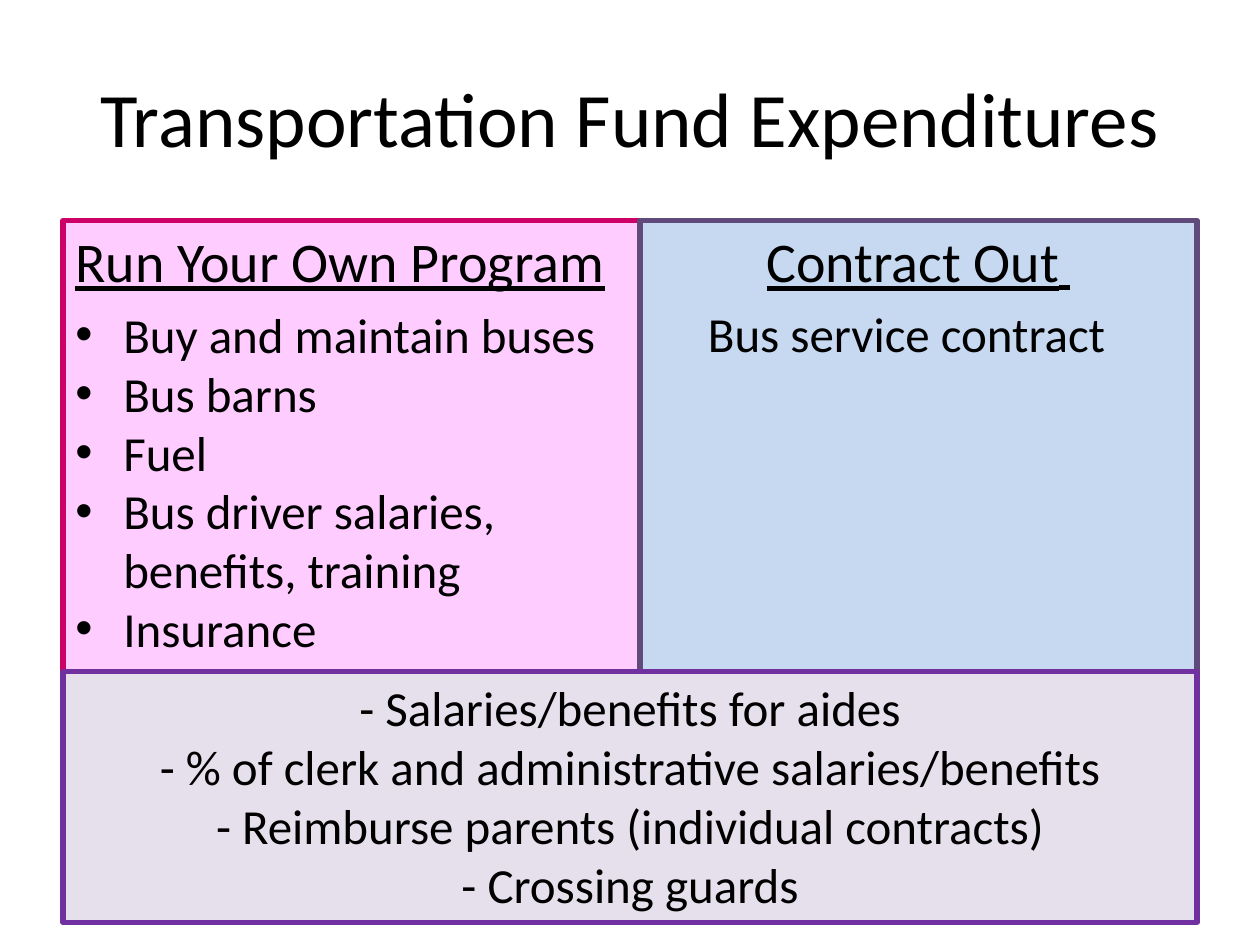
from dataclasses import dataclass

from lxml import etree
from pptx import Presentation
from pptx.dml.color import RGBColor
from pptx.enum.shapes import MSO_SHAPE
from pptx.enum.text import MSO_ANCHOR, PP_ALIGN
from pptx.oxml.ns import qn
from pptx.util import Inches, Pt


@dataclass(frozen=True)
class Theme:
    font: str = "Calibri"
    text: str = "000000"
    own_fill: str = "FFCCFF"
    own_line: str = "CC0066"
    contract_fill: str = "C6D9F1"
    contract_line: str = "604A7B"
    shared_fill: str = "E6E0EC"
    shared_line: str = "7030A0"
    border: float = 3
    title_size: int = 44
    heading_size: int = 32
    body_size: int = 28


THEME = Theme()
SPACE_RATIO = 0.2  # space before a paragraph, as a share of its type size


def add_run(paragraph, text, size, underline=False):
    run = paragraph.add_run()
    run.text = text
    run.font.name = THEME.font
    run.font.size = Pt(size)
    run.font.underline = underline
    run.font.color.rgb = RGBColor.from_string(THEME.text)


def set_indent(paragraph, margin, first_line=0, bullet=None):
    properties = paragraph._p.get_or_add_pPr()
    properties.set("marL", str(Inches(margin)))
    properties.set("indent", str(Inches(first_line)))
    if bullet:
        etree.SubElement(properties, qn("a:buFont")).set("typeface", "Arial")
        etree.SubElement(properties, qn("a:buChar")).set("char", bullet)


def add_panel(slide, box, fill, line, anchor=MSO_ANCHOR.TOP):
    """Draw a bordered rectangle and return its text frame."""
    panel = slide.shapes.add_shape(MSO_SHAPE.RECTANGLE, *map(Inches, box))
    panel.shadow.inherit = False
    panel.fill.solid()
    panel.fill.fore_color.rgb = RGBColor.from_string(fill)
    panel.line.color.rgb = RGBColor.from_string(line)
    panel.line.width = Pt(THEME.border)
    frame = panel.text_frame
    frame.word_wrap = True
    frame.vertical_anchor = anchor
    return frame


def add_heading(frame, text, align):
    heading = frame.paragraphs[0]
    heading.alignment = align
    heading.space_before = Pt(THEME.heading_size * SPACE_RATIO)
    add_run(heading, text, THEME.heading_size, underline=True)
    return heading


def add_title(slide, box, text):
    title = slide.shapes.title
    title.left, title.top, title.width, title.height = map(Inches, box)
    title.text_frame.vertical_anchor = MSO_ANCHOR.MIDDLE
    paragraph = title.text_frame.paragraphs[0]
    paragraph.alignment = PP_ALIGN.CENTER
    add_run(paragraph, text, THEME.title_size)


def add_own_program(slide, box, heading, costs):
    frame = add_panel(slide, box, THEME.own_fill, THEME.own_line)
    add_heading(frame, heading, PP_ALIGN.LEFT).space_after = Pt(6)
    for cost in costs:
        paragraph = frame.add_paragraph()
        paragraph.alignment = PP_ALIGN.LEFT
        paragraph.space_before = Pt(0)
        set_indent(paragraph, 0.38, -0.38, "•")
        add_run(paragraph, cost, THEME.body_size)


def add_contract_out(slide, box, heading, cost):
    frame = add_panel(slide, box, THEME.contract_fill, THEME.contract_line)
    heading_line = add_heading(frame, heading, PP_ALIGN.CENTER)
    add_run(heading_line, " ", THEME.body_size, underline=True)
    paragraph = frame.add_paragraph()
    paragraph.level = 1
    paragraph.alignment = PP_ALIGN.LEFT
    paragraph.space_before = Pt(THEME.body_size * SPACE_RATIO)
    set_indent(paragraph, 0.44)
    add_run(paragraph, cost, THEME.body_size)


def add_shared_costs(slide, box, costs):
    frame = add_panel(slide, box, THEME.shared_fill, THEME.shared_line)
    for index, cost in enumerate(costs):
        paragraph = frame.add_paragraph() if index else frame.paragraphs[0]
        paragraph.alignment = PP_ALIGN.CENTER
        add_run(paragraph, cost, THEME.body_size)


def main():
    deck = Presentation()
    deck.slide_width, deck.slide_height = Inches(10), Inches(7.5)
    slide = deck.slides.add_slide(deck.slide_layouts[5])

    # Two columns above one full-width panel
    left, top, width = 0.5, 1.75, 9
    own_width, column_height, shared_height = 4.58, 3.58, 1.99

    add_title(slide, (left, 0.3, width, 1.25), "Transportation Fund Expenditures")
    add_own_program(
        slide, (left, top, own_width, column_height), "Run Your Own Program",
        ["Buy and maintain buses", "Bus barns", "Fuel",
         "Bus driver salaries, benefits, training", "Insurance"])
    add_contract_out(
        slide, (left + own_width, top, width - own_width, column_height),
        "Contract Out", "Bus service contract")
    add_shared_costs(
        slide, (left, top + column_height, width, shared_height),
        ["- Salaries/benefits for aides",
         "- % of clerk and administrative salaries/benefits",
         "- Reimburse parents (individual contracts)",
         "- Crossing guards"])

    deck.save("out.pptx")


if __name__ == "__main__":
    main()
